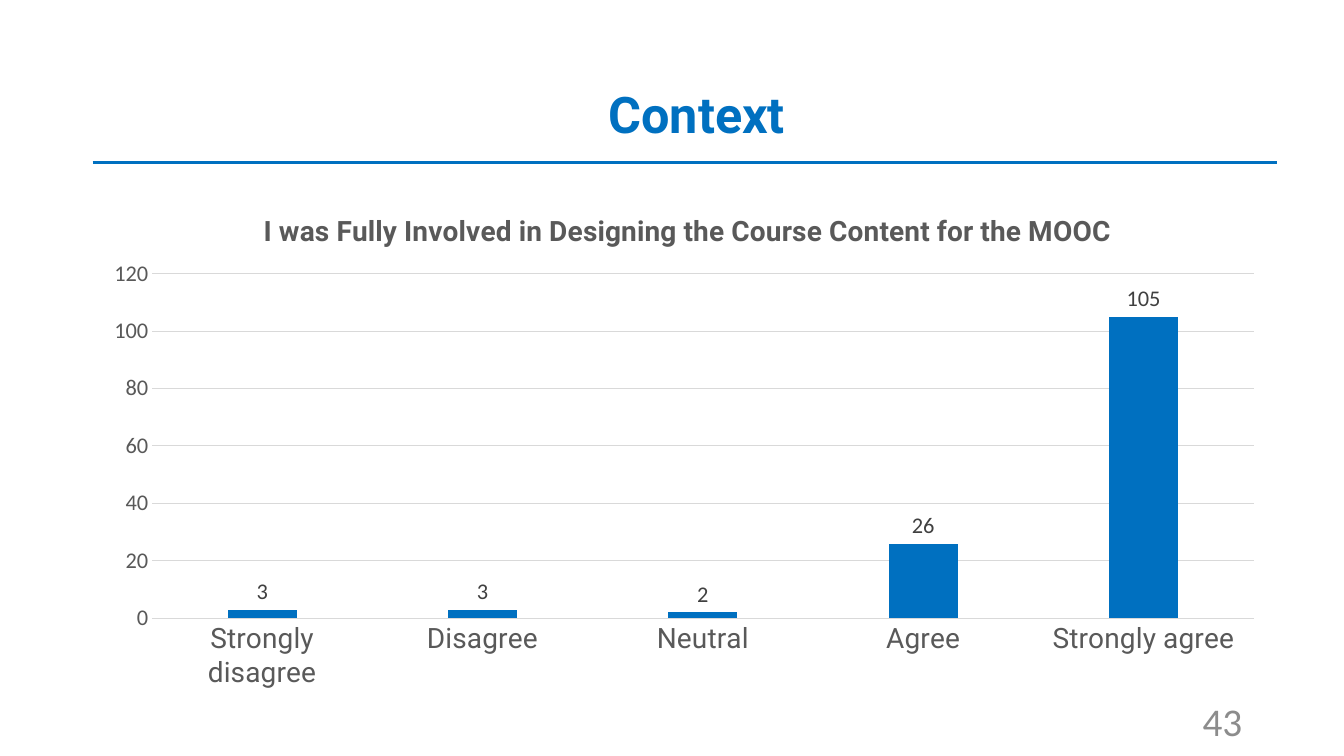
from lxml import etree
from pptx import Presentation
from pptx.chart.data import CategoryChartData
from pptx.dml.color import RGBColor
from pptx.enum import chart as ch, shapes, text
from pptx.oxml.ns import qn
from pptx.util import Pt

TITLE = "Context"
PAGE = "43"
CHART_TITLE = "I was Fully Involved in Designing the Course Content for the MOOC"
RESPONSES = {"Strongly disagree": 3, "Disagree": 3, "Neutral": 2,
             "Agree": 26, "Strongly agree": 105}

BLUE = RGBColor(0x00, 0x70, 0xC0)
DARK = RGBColor(0x40, 0x40, 0x40)
GREY = RGBColor(0x59, 0x59, 0x59)
PALE = RGBColor(0x8C, 0x8C, 0x8C)
GRID = RGBColor(0xD9, 0xD9, 0xD9)

PX = 9144
TITLE_BOX = (70, 44, 1242, 145)
RULE = (92, 161, 1267, 161)
PAGE_BOX = (942, 695, 300, 40)
CHART_BOX = (92, 185, 1175, 510)
PLOT = {"x": 0.05, "y": 0.17, "w": 0.93, "h": 0.67}
HEADING = {"x": 0.14, "y": 0.04}


def px(values):
    return [v * PX for v in values]


def style(font, size, color, name, bold=False):
    font.size, font.name, font.bold = Pt(size), name, bold
    font.color.rgb = color


def write(sp, content, align, size, color, name, bold=False):
    tf = sp.text_frame
    tf.text = content
    tf.word_wrap = True
    tf.vertical_anchor = text.MSO_ANCHOR.MIDDLE
    p = tf.paragraphs[0]
    p.alignment = align
    style(p.runs[0].font, size, color, name, bold)
    return p


def place(parent, index, box):
    for old in parent.findall(qn("c:layout")):
        parent.remove(old)
    layout = etree.Element(qn("c:layout"))
    manual = etree.SubElement(layout, qn("c:manualLayout"))
    if "w" in box:
        etree.SubElement(manual, qn("c:layoutTarget")).set("val", "inner")
    for key in "xy":
        etree.SubElement(manual, qn(f"c:{key}Mode")).set("val", "edge")
    for key, value in box.items():
        etree.SubElement(manual, qn(f"c:{key}")).set("val", str(value))
    parent.insert(index, layout)


def add_responses(s):
    data = CategoryChartData()
    data.categories = list(RESPONSES)
    data.add_series("Series 1", list(RESPONSES.values()))
    chart = s.shapes.add_chart(
        ch.XL_CHART_TYPE.COLUMN_CLUSTERED, *px(CHART_BOX), data).chart
    chart.has_legend = False
    chart.font.name = "Calibri"

    tf = chart.chart_title.text_frame
    tf.text = CHART_TITLE
    style(tf.paragraphs[0].runs[0].font, 20, GREY, "Roboto", True)
    chart.chart_title.include_in_layout = False
    place(chart.chart_title._element, 1, HEADING)

    plot = chart.plots[0]
    plot.gap_width, plot.overlap, plot.vary_by_categories = 219, -27, False
    bars = plot.series[0]
    bars.format.fill.solid()
    bars.format.fill.fore_color.rgb = BLUE
    labels = bars.data_labels
    labels.show_value = True
    labels.position = ch.XL_LABEL_POSITION.OUTSIDE_END
    style(labels.font, 16, DARK, "Calibri")

    cats, vals = chart.category_axis, chart.value_axis
    for axis, size, name in ((cats, 20, "Roboto"), (vals, 16, "Calibri")):
        axis.major_tick_mark = axis.minor_tick_mark = ch.XL_TICK_MARK.NONE
        style(axis.tick_labels.font, size, GREY, name)
    vals.minimum_scale, vals.maximum_scale, vals.major_unit = 0, 120, 20
    vals.format.line.fill.background()
    for line in (cats.format.line, vals.major_gridlines.format.line):
        line.color.rgb = GRID
        line.width = Pt(0.75)
    place(chart._chartSpace.chart.plotArea, 0, PLOT)


def main():
    prs = Presentation()
    prs.slide_width, prs.slide_height = px((1333, 750))
    s = prs.slides.add_slide(prs.slide_layouts[5])

    title = s.shapes.title
    title.left, title.top, title.width, title.height = px(TITLE_BOX)
    p = write(title, TITLE, text.PP_ALIGN.CENTER, 36, BLUE, "Roboto", True)
    p.line_spacing = 0.9

    rule = s.shapes.add_connector(shapes.MSO_CONNECTOR.STRAIGHT, *px(RULE))
    rule.line.color.rgb = BLUE
    rule.line.width = Pt(2)
    etree.SubElement(rule._element.spPr, qn("a:effectLst"))

    page = s.shapes.add_textbox(*px(PAGE_BOX))
    write(page, PAGE, text.PP_ALIGN.RIGHT, 28, PALE, "Calibri")

    add_responses(s)
    prs.save("out.pptx")


if __name__ == "__main__":
    main()
